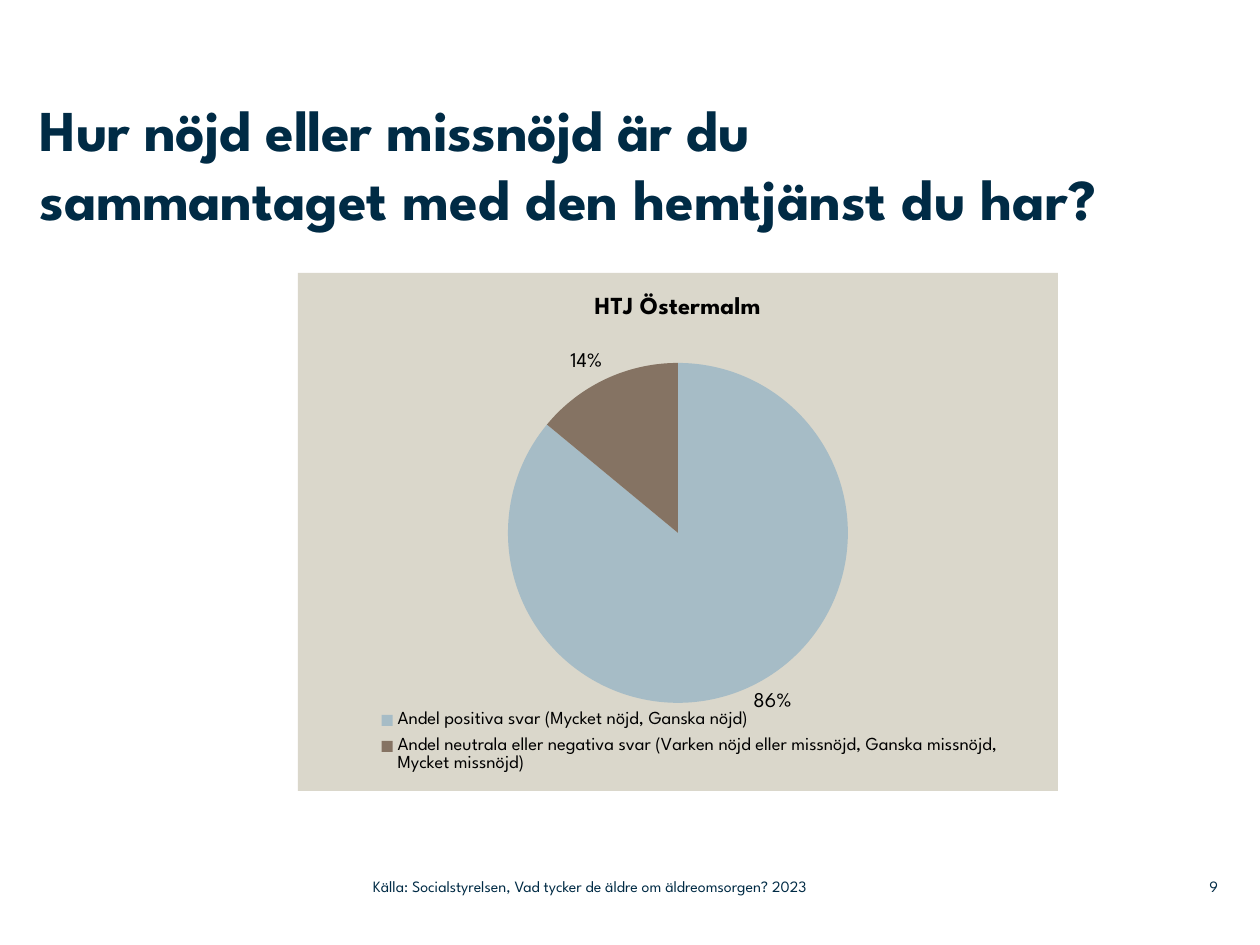
from dataclasses import dataclass

from lxml.etree import SubElement
from pptx import Presentation
from pptx.chart.data import CategoryChartData
from pptx.dml.color import RGBColor
from pptx.enum.chart import XL_CHART_TYPE, XL_LABEL_POSITION, XL_LEGEND_POSITION
from pptx.enum.text import MSO_ANCHOR, PP_ALIGN
from pptx.oxml import parse_xml
from pptx.oxml.ns import nsdecls, qn
from pptx.util import Emu, Pt

SCALE = 914400 / 126
FONT = "League Spartan"
HUES = {"navy": "002B45", "black": "000000", "sand": "DAD7CB",
        "blue": "A6BCC6", "brown": "857363"}


@dataclass
class Box:
    x: int
    y: int
    w: int
    h: int

    def emu(self) -> list[Emu]:
        return [px(n) for n in (self.x, self.y, self.w, self.h)]


@dataclass
class Part:
    text: str
    track: int = 0  # hundredths of a point


@dataclass
class Label:
    box: Box
    lines: list[list[Part]]
    size: float = 9
    bold: bool = False
    align: PP_ALIGN = PP_ALIGN.LEFT
    anchor: MSO_ANCHOR = MSO_ANCHOR.MIDDLE


def px(n: int) -> Emu:
    return Emu(round(n * SCALE))


def tint(name: str) -> RGBColor:
    return RGBColor.from_string(HUES[name])


def style(font, size: float, hue: str, bold: bool = False) -> None:
    font.name, font.size, font.bold = FONT, Pt(size), bold
    font.color.rgb = tint(hue)


def write(slide, label: Label) -> None:
    frame = slide.shapes.add_textbox(*label.box.emu()).text_frame
    frame.word_wrap = True
    frame.vertical_anchor = label.anchor
    frame.margin_left = frame.margin_right = 0
    frame.margin_top = frame.margin_bottom = 0
    para = frame.paragraphs[0]
    para.alignment = label.align
    for row, parts in enumerate(label.lines):
        if row:
            para.add_line_break()
        for part in parts:
            run = para.add_run()
            run.text = part.text
            style(run.font, label.size, "navy", label.bold)
            if part.track:
                run._r.get_or_add_rPr().set("spc", str(part.track))


def layout(area: Box, frame: Box, inner: bool = False):
    """Place a chart part by its share of the chart frame."""
    root = parse_xml(f"<c:layout {nsdecls('c')}><c:manualLayout/></c:layout>")
    rules = {"layoutTarget": "inner"} if inner else {}
    rules |= {"xMode": "edge", "yMode": "edge",
              "x": (area.x - frame.x) / frame.w, "y": (area.y - frame.y) / frame.h,
              "w": area.w / frame.w, "h": area.h / frame.h}
    for tag, val in rules.items():
        SubElement(root[0], qn(f"c:{tag}")).set("val", str(val))
    return root


def draw_pie(slide, frame: Box, disc: Box, key: Box) -> None:
    data = CategoryChartData()
    data.categories = [
        "Andel positiva svar (Mycket nöjd, Ganska nöjd)",
        "Andel neutrala eller negativa svar (Varken nöjd eller missnöjd, "
        "Ganska missnöjd, Mycket missnöjd)"]
    data.add_series("HTJ Östermalm", (86, 14))
    chart = slide.shapes.add_chart(XL_CHART_TYPE.PIE, *frame.emu(), data).chart
    style(chart.font, 18, "black")

    # Heading
    chart.has_title = True
    run = chart.chart_title.text_frame.paragraphs[0].add_run()
    run.text = "HTJ Östermalm"
    style(run.font, 14, "black", True)
    chart.chart_title.include_in_layout = False

    # Slices and their labels
    plot = chart.plots[0]
    plot.vary_by_categories = True
    for i, hue in enumerate(("blue", "brown")):
        fill = plot.series[0].points[i].format.fill
        fill.solid()
        fill.fore_color.rgb = tint(hue)
    plot.has_data_labels = True
    tags = plot.data_labels
    tags.show_percentage, tags.show_value = True, False
    tags.number_format, tags.number_format_is_linked = "0%", False
    tags.position = XL_LABEL_POSITION.OUTSIDE_END
    style(tags.font, 12, "black")

    # Legend
    chart.has_legend = True
    chart.legend.position = XL_LEGEND_POSITION.BOTTOM
    chart.legend.include_in_layout = False
    style(chart.legend.font, 10.5, "black")

    # Placing and backdrop
    root = chart._chartSpace
    area = root.find(".//" + qn("c:plotArea"))
    legend = root.find(".//" + qn("c:legend"))
    for node in (area, legend):
        for old in node.findall(qn("c:layout")):
            node.remove(old)
    area.insert(0, layout(disc, frame, inner=True))
    legend.find(qn("c:legendPos")).addnext(layout(key, frame))
    root.find(qn("c:chart")).addnext(parse_xml(
        f"<c:spPr {nsdecls('c', 'a')}><a:solidFill><a:srgbClr val=\"{HUES['sand']}\"/>"
        "</a:solidFill><a:ln><a:noFill/></a:ln></c:spPr>"))


def main() -> None:
    deck = Presentation()
    deck.slide_width, deck.slide_height = px(1260), px(945)
    slide = deck.slides.add_slide(deck.slide_layouts[6])

    # Footer and title
    labels = [
        Label(Box(1159, 868, 59, 37), [[Part("9")]], align=PP_ALIGN.RIGHT),
        Label(Box(373, 868, 558, 37),
              [[Part("Källa: Socialstyrelsen, Vad tycker de äldre om äldreomsorgen? 2023")]]),
        Label(Box(40, 94, 1198, 179),
              [[Part("Hur nöjd eller missnöjd är du", -30)],
               [Part("samman", -30), Part("taget med den hemtjänst du har?")]],
              size=33, bold=True, anchor=MSO_ANCHOR.TOP),
    ]
    for label in labels:
        write(slide, label)

    # Chart
    draw_pie(slide, Box(298, 273, 760, 518), Box(508, 363, 340, 340), Box(370, 703, 640, 78))
    deck.save("out.pptx")


if __name__ == "__main__":
    main()
